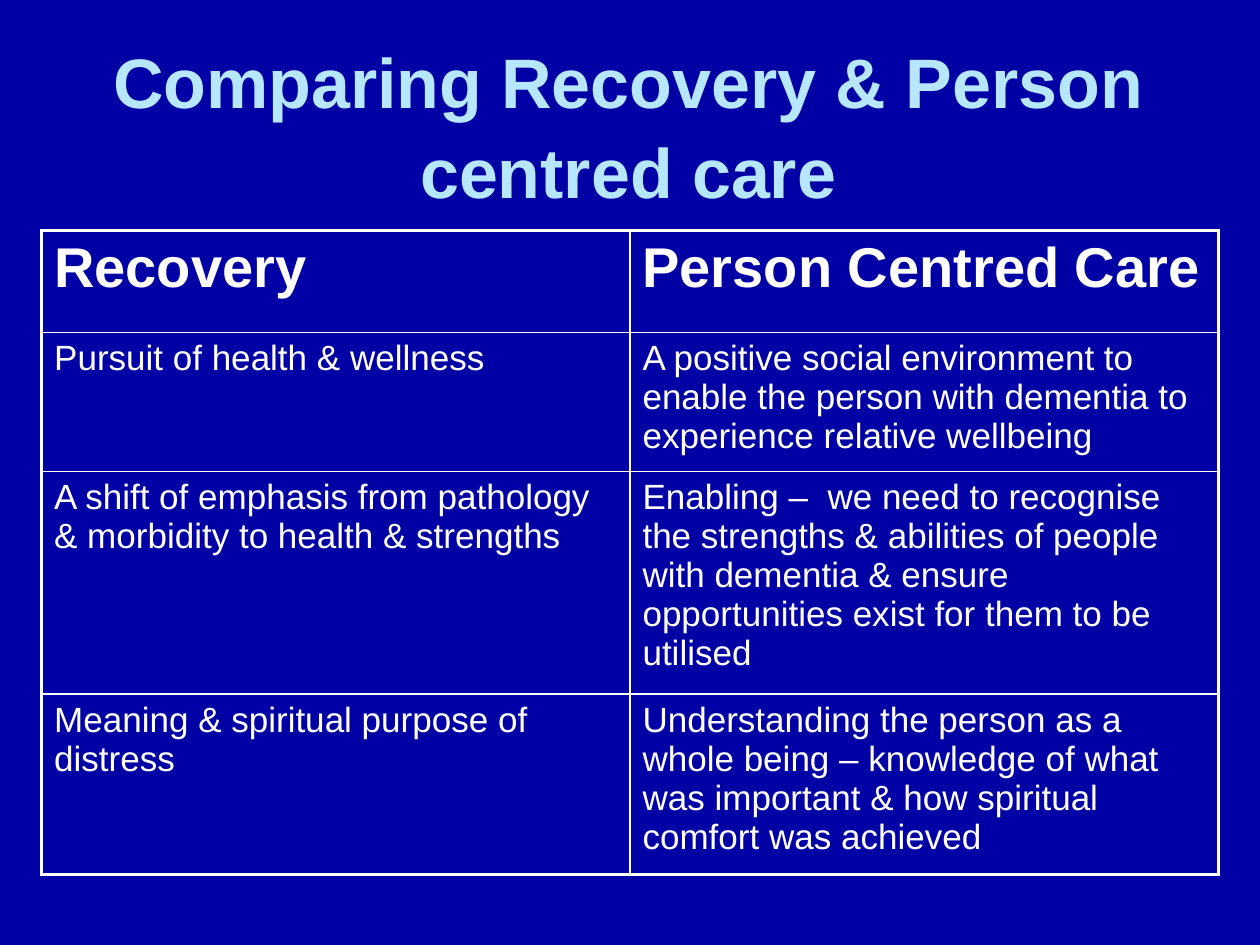
from dataclasses import dataclass

from lxml import etree
from pptx import Presentation
from pptx import util as u
from pptx.dml.color import RGBColor
from pptx.enum import text
from pptx.oxml import ns


@dataclass(frozen=True)
class Theme:
    back: str = "0000A4"
    title: str = "B7E7FF"
    ink: str = "FFFFFF"
    font: str = "Arial"
    big: int = 40
    head: int = 32
    body: int = 20
    thick: float = 2.25
    thin: float = 1


def write(frame, words, font, size, color, bold=False, align=None, lead=None):
    frame.word_wrap = True
    par = frame.paragraphs[0]
    par.alignment = align
    par.line_spacing = lead
    run = par.add_run()
    run.text = words
    run.font.name = font
    run.font.size = u.Pt(size)
    run.font.bold = bold
    run.font.color.rgb = RGBColor.from_string(color)


class Deck:
    def __init__(self, theme):
        self.theme = theme
        self.show = Presentation()
        self.show.slide_width, self.show.slide_height = u.Inches(10), u.Inches(7.5)
        self.slide = self.show.slides.add_slide(self.show.slide_layouts[6])
        fill = self.slide.background.fill
        fill.solid()
        fill.fore_color.rgb = RGBColor.from_string(theme.back)

    def title(self, words, *area):
        look = self.theme
        box = self.slide.shapes.add_textbox(*map(u.Inches, area))
        box.text_frame.vertical_anchor = text.MSO_ANCHOR.MIDDLE
        write(box.text_frame, words, look.font, look.big, look.title,
              bold=True, align=text.PP_ALIGN.CENTER, lead=1.07)

    def edge(self, cell, outer):
        props = cell._tc.get_or_add_tcPr()
        for spot, side in enumerate("LRTB"):
            width = self.theme.thick if outer[side] else self.theme.thin
            line = etree.Element(ns.qn(f"a:ln{side}"), w=str(u.Pt(width)))
            fill = etree.SubElement(line, ns.qn("a:solidFill"))
            etree.SubElement(fill, ns.qn("a:srgbClr"), val=self.theme.ink)
            props.insert(spot, line)

    def table(self, rows, left, top, width, highs):
        look = self.theme
        last, end = len(rows) - 1, len(rows[0]) - 1
        area = map(u.Inches, (left, top, width, sum(highs)))
        grid = self.slide.shapes.add_table(last + 1, end + 1, *area).table
        for row, high in zip(grid.rows, highs):
            row.height = u.Inches(high)
        for r, row in enumerate(rows):
            for c, words in enumerate(row):
                cell = grid.cell(r, c)
                cell.fill.background()
                self.edge(cell, {"L": c == 0, "R": c == end,
                                 "T": r == 0, "B": r == last})
                write(cell.text_frame, words, look.font,
                      look.body if r else look.head, look.ink, bold=r == 0)


ROWS = [
    ("Recovery", "Person Centred Care"),
    ("Pursuit of health & wellness",
     "A positive social environment to enable the person with dementia "
     "to experience relative wellbeing"),
    ("A shift of emphasis from pathology & morbidity to health & strengths",
     "Enabling –  we need to recognise the strengths & abilities of people "
     "with dementia & ensure opportunities exist for them to be utilised"),
    ("Meaning & spiritual purpose of distress",
     "Understanding the person as a whole being – knowledge of what "
     "was important & how spiritual comfort was achieved"),
]


def main():
    deck = Deck(Theme())
    deck.title("Comparing Recovery & Person centred care", 0.33, 0.25, 9.31, 1.45)
    deck.table(ROWS, 0.33, 1.83, 9.34, (0.81, 1.03, 1.65, 1.34))
    deck.show.save("out.pptx")


if __name__ == "__main__":
    main()
